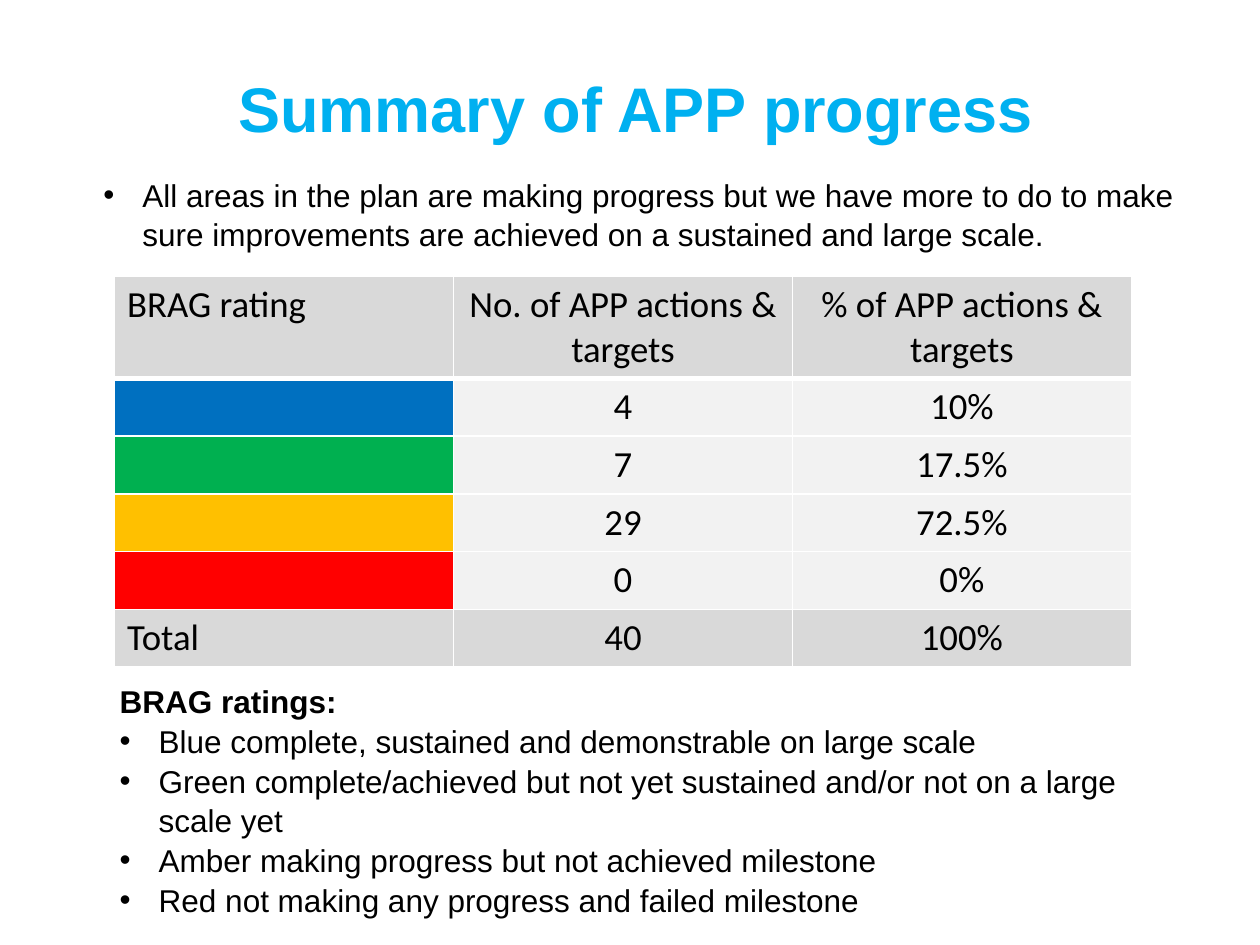
from pptx import Presentation
from pptx.dml.color import RGBColor
from pptx.enum.text import MSO_ANCHOR, MSO_AUTO_SIZE, PP_ALIGN
from pptx.oxml.ns import qn
from pptx.util import Inches, Pt
from lxml import etree

CENTER, LEFT = PP_ALIGN.CENTER, PP_ALIGN.LEFT
TOP, BOTTOM = MSO_ANCHOR.TOP, MSO_ANCHOR.BOTTOM
NO_FIT = MSO_AUTO_SIZE.NONE
TWO_CONTENT = 3

COLORS = {
    "title": "00B0F0", "text": "000000", "border": "FFFFFF",
    "band": "D9D9D9", "cell": "F2F2F2",
    "blue": "0070C0", "green": "00B050", "amber": "FFC000", "red": "FF0000",
}

HEADER = ["BRAG rating", "No. of APP actions & targets", "% of APP actions & targets"]
RATINGS = [("blue", "4", "10%"), ("green", "7", "17.5%"),
           ("amber", "29", "72.5%"), ("red", "0", "0%")]
TOTAL = ["Total", "40", "100%"]


def rgb(name):
    return RGBColor.from_string(COLORS[name])


def set_font(para, name, size, color, bold=False):
    para.font.name = name
    para.font.size = Pt(size)
    para.font.bold = bold
    para.font.color.rgb = rgb(color)


def place(shape, box, anchor):
    shape.left, shape.top, shape.width, shape.height = map(Inches, box)
    frame = shape.text_frame
    frame.word_wrap = True
    frame.auto_size = NO_FIT
    frame.vertical_anchor = anchor
    return frame


def set_bullet(para, shown):
    indent = Inches(0.31) if shown else 0
    props = para._p.get_or_add_pPr()
    props.set("marL", str(indent))
    props.set("indent", str(-indent))
    if shown:
        etree.SubElement(props, qn("a:buFont")).set("typeface", "Arial")
        etree.SubElement(props, qn("a:buChar")).set("char", "•")
    else:
        etree.SubElement(props, qn("a:buNone"))


def fill_title(shape, box, text):
    frame = place(shape, box, BOTTOM)
    frame.text = text
    para = frame.paragraphs[0]
    para.alignment = CENTER
    para.line_spacing = 0.9
    set_font(para, "Arial", 36, "title", bold=True)


def fill_list(shape, box, items, heading=None):
    frame = place(shape, box, TOP)
    lines = ([heading] if heading else []) + items
    frame.text = "\n".join(lines)
    for para, line in zip(frame.paragraphs, lines):
        is_heading = line == heading
        para.alignment = LEFT
        para.line_spacing = 1.05
        para.space_before = Pt(0)
        set_bullet(para, not is_heading)
        set_font(para, "Arial", 18, "text", bold=is_heading)


def set_borders(cell, bottom):
    props = cell._tc.get_or_add_tcPr()
    for side, width in (("L", 1), ("R", 1), ("T", 1), ("B", bottom)):
        line = etree.SubElement(props, qn(f"a:ln{side}"), w=str(Pt(width)))
        paint = etree.SubElement(line, qn("a:solidFill"))
        etree.SubElement(paint, qn("a:srgbClr"), val=COLORS["border"])


def fill_cell(cell, text, fill, align, bottom=1):
    set_borders(cell, bottom)
    cell.fill.solid()
    cell.fill.fore_color.rgb = rgb(fill)
    cell.text = text
    para = cell.text_frame.paragraphs[0]
    para.alignment = align
    set_font(para, "Calibri", 21, "text")


def add_rating_table(page, box):
    rows = [(HEADER, ["band"] * 3)]
    rows += [(["", count, share], [color, "cell", "cell"])
             for color, count, share in RATINGS]
    rows.append((TOTAL, ["band"] * 3))

    table = page.shapes.add_table(len(rows), len(HEADER), *map(Inches, box)).table
    table.first_row = False
    table.horz_banding = False
    for column in table.columns:
        column.width = Inches(box[2] / len(HEADER))
    header_height = 0.81
    for index, (texts, fills) in enumerate(rows):
        body_height = (box[3] - header_height) / (len(rows) - 1)
        table.rows[index].height = Inches(body_height if index else header_height)
        for col, (text, fill) in enumerate(zip(texts, fills)):
            fill_cell(table.cell(index, col), text, fill,
                      CENTER if col else LEFT, bottom=1 if index else 3)


def main():
    deck = Presentation()
    deck.slide_width, deck.slide_height = Inches(10), Inches(7.5)
    page = deck.slides.add_slide(deck.slide_layouts[TWO_CONTENT])
    title, intro, key = list(page.placeholders)[:3]

    # Title and opening statement
    fill_title(title, (0.31, 0.52, 9.47, 0.69), "Summary of APP progress")
    fill_list(intro, (0.72, 1.33, 8.85, 0.71), [
        "All areas in the plan are making progress but we have more to do "
        "to make sure improvements are achieved on a sustained and large scale.",
    ])

    # Ratings table
    add_rating_table(page, (0.91, 2.19, 8.07, 3.1))

    # Key to the ratings
    fill_list(key, (0.85, 5.35, 8.17, 1.92), [
        "Blue complete, sustained and demonstrable on large scale",
        "Green complete/achieved but not yet sustained and/or not on a large scale yet",
        "Amber making progress but not achieved milestone",
        "Red not making any progress and failed milestone",
    ], heading="BRAG ratings:")

    deck.save("out.pptx")


if __name__ == "__main__":
    main()
